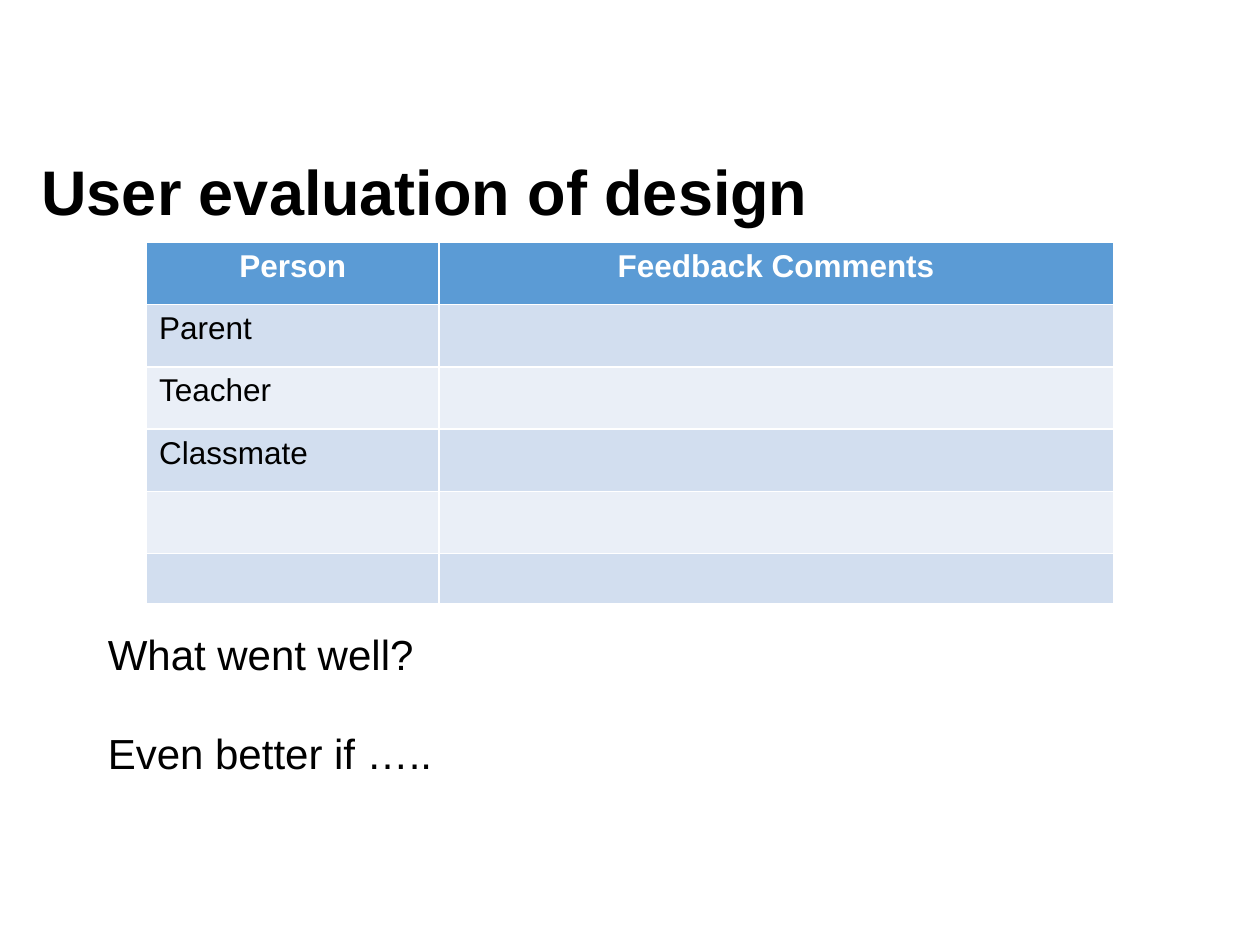
from pptx import Presentation
from pptx.dml.color import RGBColor
from pptx.enum.text import MSO_ANCHOR, MSO_AUTO_SIZE, PP_ALIGN
from pptx.util import Pt

COLOURS = {
    "text": "000000",
    "header_text": "FFFFFF",
    "header": "5B9BD5",
    "dark_band": "D2DEEF",
    "light_band": "EAEFF7",
}
ROWS = [
    ("Person", "Feedback Comments"),
    ("Parent", ""),
    ("Teacher", ""),
    ("Classmate", ""),
    ("", ""),
    ("", ""),
]
QUESTIONS = ["What went well?", "Even better if ….."]


class SlideBuilder:
    font_name = "Arial"

    def __init__(self, slide):
        self.slide = slide

    def colour(self, name):
        return RGBColor.from_string(COLOURS[name])

    def format_paragraph(self, paragraph, size, colour="text", bold=False, align=PP_ALIGN.LEFT):
        paragraph.alignment = align
        for run in paragraph.runs:
            run.font.name = self.font_name
            run.font.size = Pt(size)
            run.font.bold = bold
            run.font.color.rgb = self.colour(colour)

    def title(self, text, left, top, width, height, size):
        shape = self.slide.shapes.title
        shape.left, shape.top = Pt(left), Pt(top)
        shape.width, shape.height = Pt(width), Pt(height)
        frame = shape.text_frame
        frame.text = text
        frame.word_wrap = True
        frame.auto_size = MSO_AUTO_SIZE.SHAPE_TO_FIT_TEXT
        frame.vertical_anchor = MSO_ANCHOR.TOP
        self.format_paragraph(frame.paragraphs[0], size, bold=True)

    def text_box(self, lines, left, top, width, height, size, gap):
        shape = self.slide.shapes.add_textbox(Pt(left), Pt(top), Pt(width), Pt(height))
        frame = shape.text_frame
        frame.word_wrap = True
        frame.text = "\n".join(lines)
        for index, paragraph in enumerate(frame.paragraphs):
            if index:
                paragraph.space_before = Pt(gap)
            self.format_paragraph(paragraph, size)

    def table(self, rows, left, top, column_widths, row_heights, size):
        table = self.slide.shapes.add_table(
            len(rows), len(column_widths), Pt(left), Pt(top),
            Pt(sum(column_widths)), Pt(sum(row_heights)),
        ).table
        for column, width in zip(table.columns, column_widths):
            column.width = Pt(width)
        for row, height in zip(table.rows, row_heights):
            row.height = Pt(height)
        for row_index, texts in enumerate(rows):
            is_header = row_index == 0
            band = "header" if is_header else ("light_band", "dark_band")[row_index % 2]
            for column_index, text in enumerate(texts):
                cell = table.cell(row_index, column_index)
                cell.fill.solid()
                cell.fill.fore_color.rgb = self.colour(band)
                cell.text = text
                self.format_paragraph(
                    cell.text_frame.paragraphs[0], size,
                    colour="header_text" if is_header else "text",
                    bold=is_header,
                    align=PP_ALIGN.CENTER if is_header else PP_ALIGN.LEFT,
                )


def main():
    presentation = Presentation()
    presentation.slide_width, presentation.slide_height = Pt(720), Pt(540)
    builder = SlideBuilder(presentation.slides.add_slide(presentation.slide_layouts[5]))
    builder.title("User evaluation of design", 16.5, 83.5, 577, 51, size=36)
    builder.text_box(QUESTIONS, 54.5, 355.5, 611, 124, size=24, gap=28)
    builder.table(ROWS, 83.75, 138.5, [167, 385.5], [35.6] * 5 + [28.6], size=18)
    presentation.save("out.pptx")


if __name__ == "__main__":
    main()
